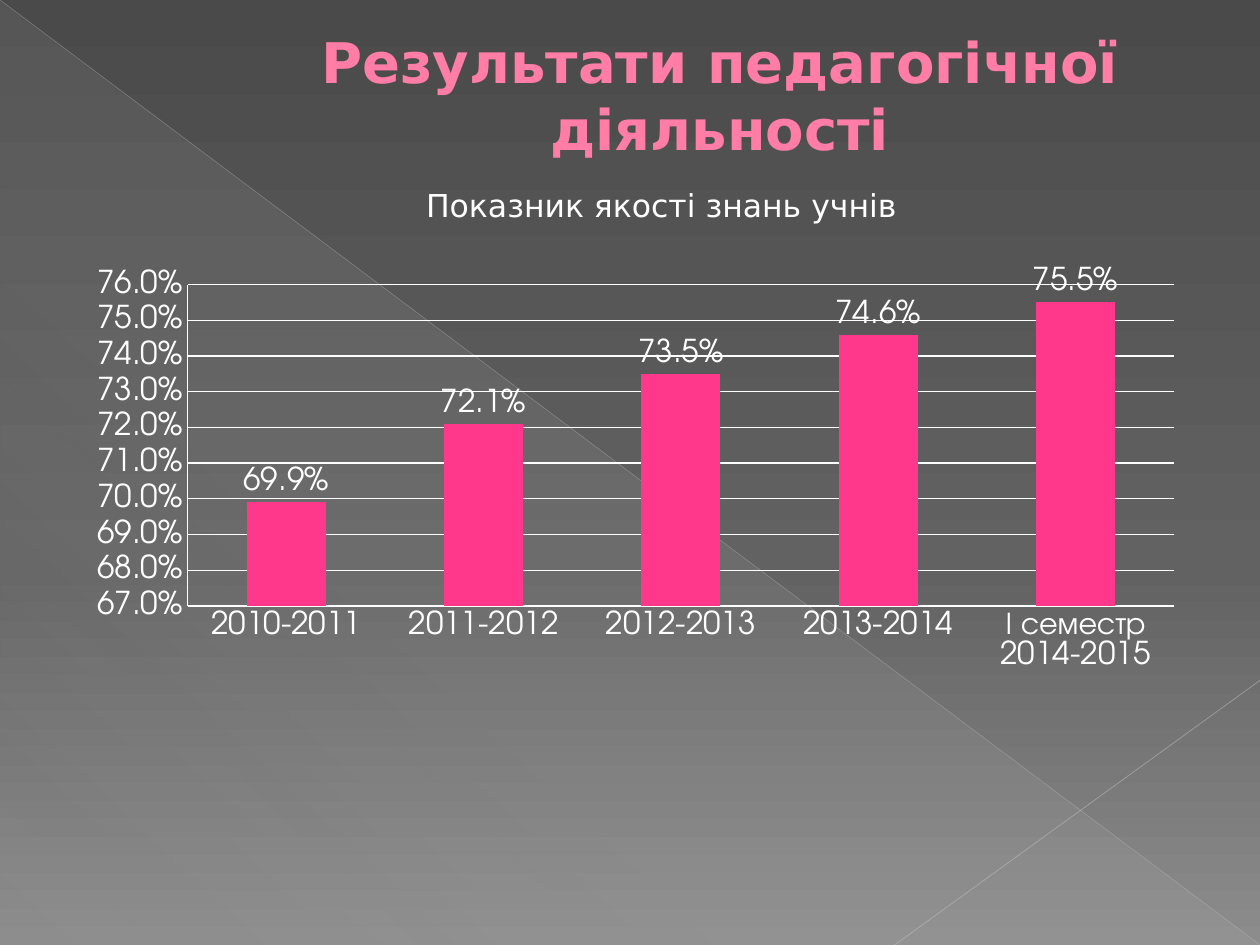
from pptx import Presentation
from pptx import util as u
from pptx.chart.data import CategoryChartData
from pptx.dml.color import RGBColor
from pptx.enum import chart as charts, shapes, text
from pptx.oxml import parse_xml
from pptx.oxml import ns

WIDTH, HEIGHT = 10, 7.5
WHITE, PINK = "FFFFFF", "FF388C"
RATES = {
    "2010-2011": 0.699,
    "2011-2012": 0.721,
    "2012-2013": 0.735,
    "2013-2014": 0.746,
    "І семестр 2014-2015": 0.755,
}


def colour(value):
    """Turn a hex string into a colour."""
    return RGBColor.from_string(value)


def inches(box):
    """Turn a box in shares of the slide into lengths."""
    return [u.Inches(share * size) for share, size in zip(box, (WIDTH, HEIGHT) * 2)]


def apply_format(target, values):
    """Set each attribute of the target from a dict."""
    for name, value in values.items():
        setattr(target, name, value)


def style_font(font, fill, **values):
    """Format a font and its colour."""
    apply_format(font, values)
    font.fill.solid()
    font.fill.fore_color.rgb = colour(fill)


def set_gradient(parent, stops, angle):
    """Replace a solid fill by a gradient of (position, colour, opacity) stops."""
    marks = "".join(
        f'<a:gs pos="{place * 1000}"><a:srgbClr val="{tone}">'
        f'<a:alpha val="{opacity * 1000}"/></a:srgbClr></a:gs>'
        for place, tone, opacity in stops
    )
    gradient = parse_xml(
        f'<a:gradFill {ns.nsdecls("a")} rotWithShape="1"><a:gsLst>{marks}</a:gsLst>'
        f'<a:lin ang="{angle * 60000}" scaled="0"/></a:gradFill>'
    )
    parent.replace(parent.find(ns.qn("a:solidFill")), gradient)


def add_ray(page, box, tone, width, opacity):
    """Draw a faint line from corner to corner of start and end shares."""
    ray = page.shapes.add_connector(shapes.MSO_CONNECTOR.STRAIGHT, *inches(box))
    ray.line.width = u.Pt(width)
    ray.line.color.rgb = colour(tone)
    properties = ray._element.spPr
    tint = properties.find(".//" + ns.qn("a:srgbClr"))
    tint.append(parse_xml(f'<a:alpha {ns.nsdecls("a")} val="{opacity * 1000}"/>'))
    properties.append(parse_xml(f'<a:effectLst {ns.nsdecls("a")}/>'))


def add_backdrop(page, box):
    """Paint the grey background, its triangle and its rays."""
    page.background.fill.solid()
    backing = page._element.find(".//" + ns.qn("p:bgPr"))
    set_gradient(backing, [(0, "4A4A4A", 100), (60, "626262", 100), (100, "8C8C8C", 100)], 90)
    triangle = page.shapes.add_shape(shapes.MSO_SHAPE.RIGHT_TRIANGLE, *inches(box))
    triangle.shadow.inherit = False
    triangle.line.fill.background()
    triangle.fill.solid()
    set_gradient(triangle._element.spPr, [(0, "D2D2D2", 10), (70, "D2D2D2", 8), (100, "D2D2D2", 1)], 133)
    add_ray(page, (0, 0, 1, 1), "BFBFBF", 0.39, 35)
    add_ray(page, (1, 0.72, 0.71, 1), "C6C6C6", 0.47, 45)


def write_line(shape, wording, fill, **values):
    """Write one centred paragraph and return it."""
    para = shape.text_frame.paragraphs[0]
    para.alignment = text.PP_ALIGN.CENTER
    span = para.add_run()
    span.text = wording
    style_font(span.font, fill, name="DejaVu Sans", **values)
    return para


def add_heading(page, box):
    """Place the outlined title in front of the backdrop."""
    title = page.shapes.title
    title._element.getparent().append(title._element)
    apply_format(title, dict(zip(("left", "top", "width", "height"), inches(box))))
    apply_format(title.text_frame, {
        "vertical_anchor": text.MSO_ANCHOR.MIDDLE,
        "word_wrap": True,
        "auto_size": text.MSO_AUTO_SIZE.NONE,
    })
    para = write_line(title, "Результати педагогічної діяльності", "FF7DA7", size=u.Pt(32), bold=True)
    apply_indent = para._p.get_or_add_pPr().set
    apply_indent("marL", str(u.Inches(0.53)))
    apply_indent("indent", "0")
    outline = parse_xml(
        f'<a:ln {ns.nsdecls("a")} w="{u.Pt(0.5)}"><a:solidFill>'
        '<a:srgbClr val="B12761"/></a:solidFill></a:ln>'
    )
    para.runs[0].font._element.insert(0, outline)


def style_axis(axis):
    """Give an axis a thin white line without ticks."""
    axis.major_tick_mark = axis.minor_tick_mark = charts.XL_TICK_MARK.NONE
    axis.format.line.color.rgb = colour(WHITE)
    axis.format.line.width = u.Pt(0.75)


def set_plot_area(chart, box):
    """Fix the inner plot area in shares of the chart."""
    places = "".join(
        f'<c:{name} val="{share}"/>' for name, share in zip("xywh", box)
    )
    layout = parse_xml(
        f'<c:layout {ns.nsdecls("c")}><c:manualLayout><c:layoutTarget val="inner"/>'
        f'<c:xMode val="edge"/><c:yMode val="edge"/>{places}</c:manualLayout></c:layout>'
    )
    area = chart._chartSpace.chart.plotArea
    for old in area.findall(ns.qn("c:layout")):
        area.remove(old)
    area.insert(0, layout)


def add_rates_chart(page, box):
    """Chart the quality of knowledge by school year."""
    data = CategoryChartData(number_format="0.0%")
    data.categories = list(RATES)
    data.add_series("Series 1", list(RATES.values()))
    chart = page.shapes.add_chart(
        charts.XL_CHART_TYPE.COLUMN_CLUSTERED, *inches(box), data
    ).chart
    apply_format(chart, {"has_legend": False, "has_title": False})
    style_font(chart.font, WHITE, name="TeX Gyre Adventor", size=u.Pt(18))
    style_axis(chart.category_axis)
    scale = chart.value_axis
    style_axis(scale)
    apply_format(scale, {
        "minimum_scale": 0.67, "maximum_scale": 0.76, "major_unit": 0.01,
        "has_major_gridlines": True,
    })
    scale.major_gridlines.format.line.color.rgb = colour(WHITE)
    scale.major_gridlines.format.line.width = u.Pt(0.75)
    plot = chart.plots[0]
    apply_format(plot, {"gap_width": 150, "vary_by_categories": False, "has_data_labels": True})
    percent = {"number_format": "0.0%", "number_format_is_linked": False}
    apply_format(scale.tick_labels, percent)
    apply_format(plot.data_labels, {
        **percent, "show_value": True, "position": charts.XL_LABEL_POSITION.OUTSIDE_END,
    })
    bars = plot.series[0].format.fill
    bars.solid()
    bars.fore_color.rgb = colour(PINK)
    set_plot_area(chart, (0.11, 0.04, 0.87, 0.51))


def add_caption(page, box):
    """Write the caption above the chart."""
    caption = page.shapes.add_textbox(*inches(box))
    apply_format(caption.text_frame, {
        "word_wrap": True, "auto_size": text.MSO_AUTO_SIZE.SHAPE_TO_FIT_TEXT,
    })
    write_line(caption, "Показник якості знань учнів", WHITE, size=u.Pt(18))


def main():
    """Build the slide and save it."""
    deck = Presentation()
    apply_format(deck, {"slide_width": u.Inches(WIDTH), "slide_height": u.Inches(HEIGHT)})
    page = deck.slides.add_slide(deck.slide_layouts.get_by_name("Title Only"))
    add_backdrop(page, (0, 0, 1, 1))
    add_heading(page, (0.14, 0.04, 0.81, 0.12))
    add_rates_chart(page, (0.05, 2.06 / HEIGHT, 0.9, 5 / HEIGHT))
    add_caption(page, (0.17, 0.19, 0.71, 0.05))
    deck.save("out.pptx")


if __name__ == "__main__":
    main()
